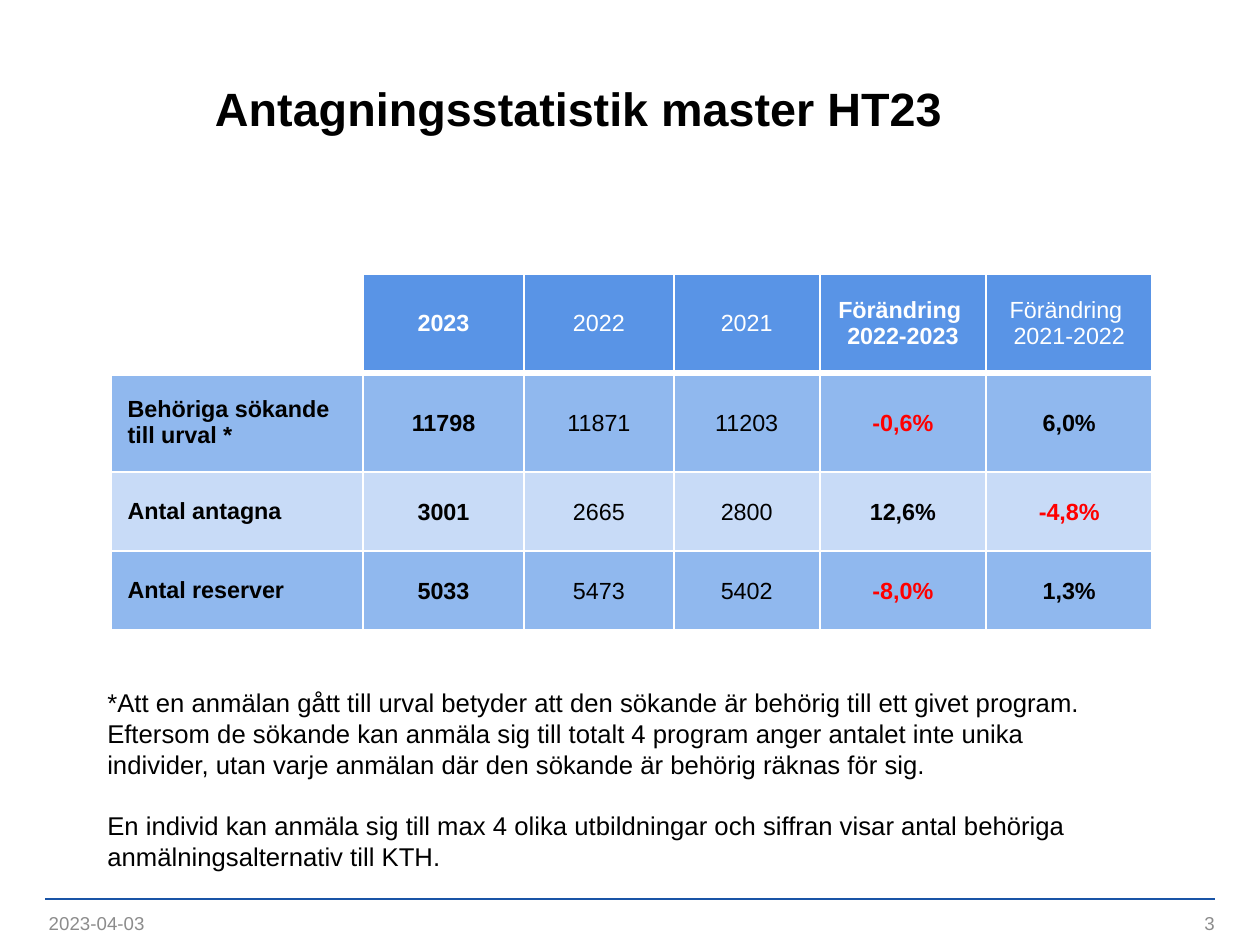
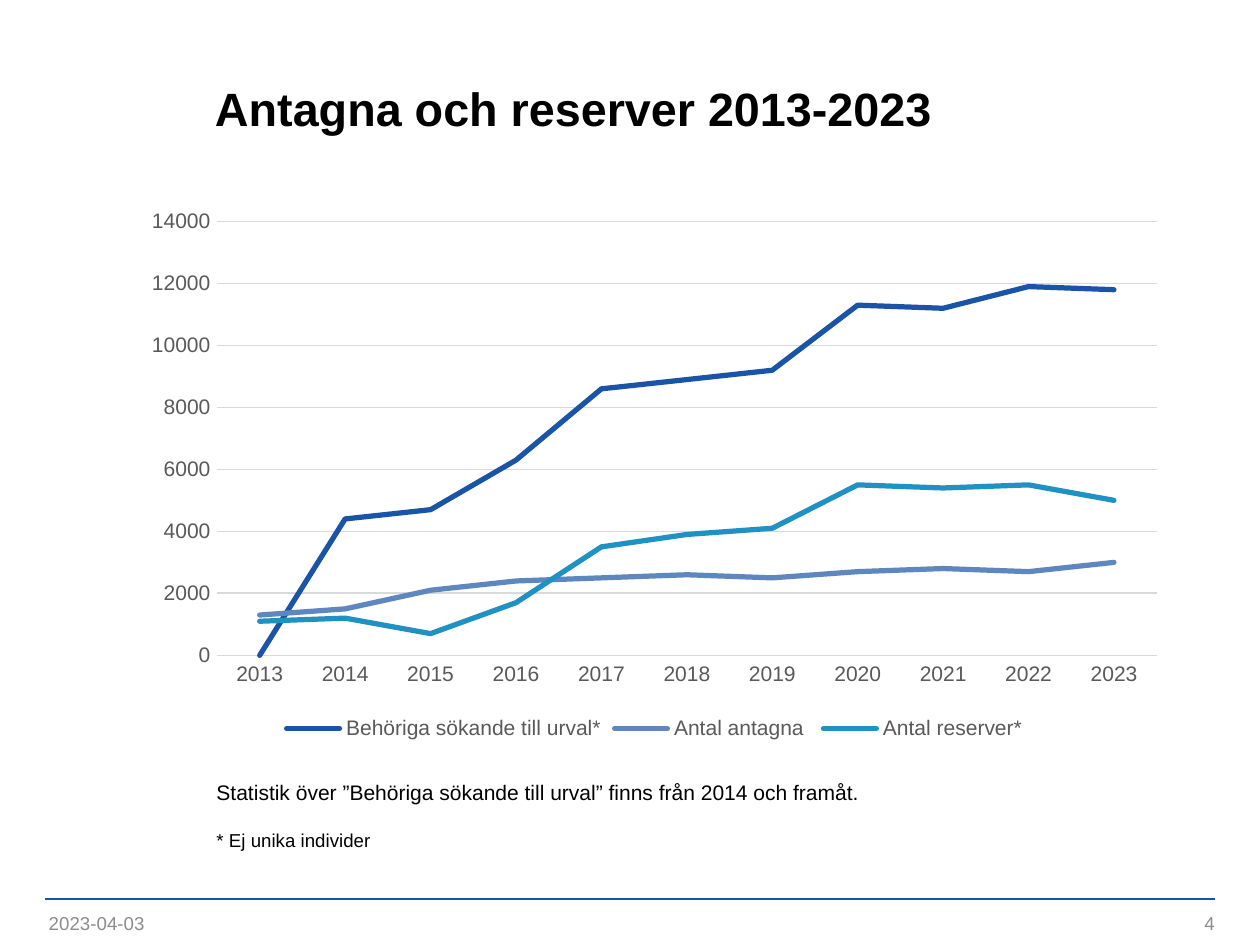
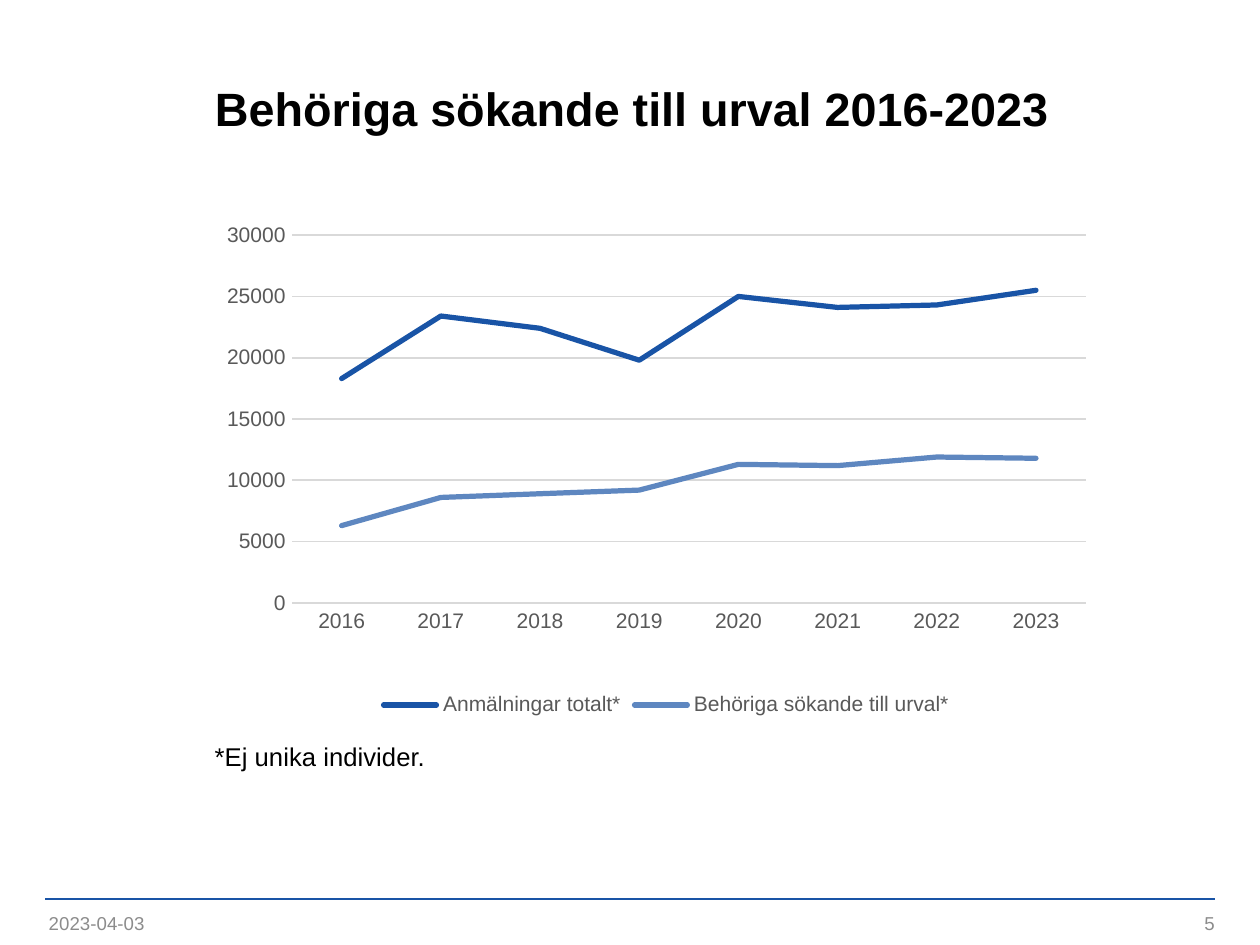
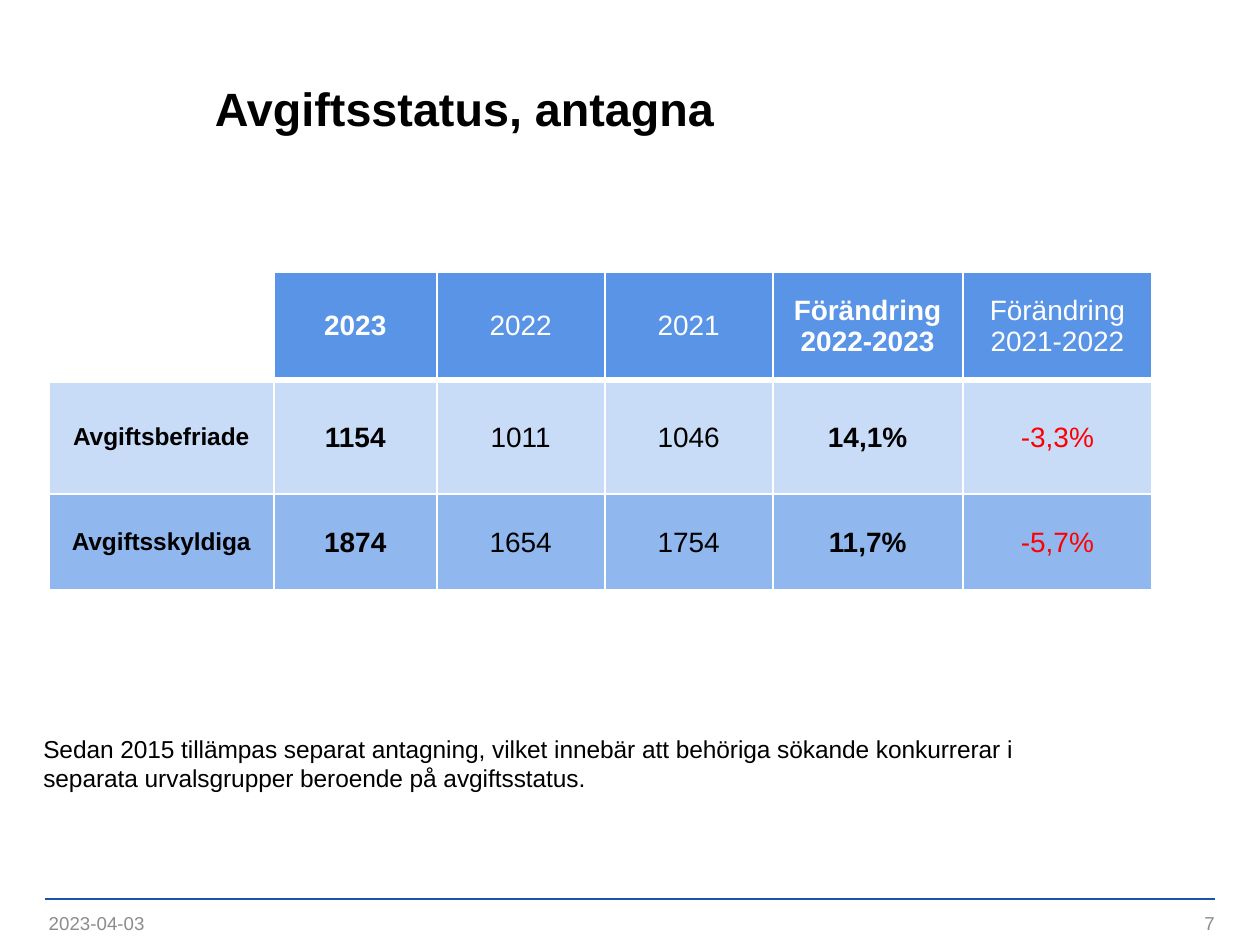
from dataclasses import dataclass
from typing import Optional

from pptx import Presentation
from pptx.chart.chart import Chart
from pptx.chart.data import CategoryChartData
from pptx.dml.color import RGBColor
from pptx.enum.chart import XL_CHART_TYPE, XL_LEGEND_POSITION, XL_TICK_MARK
from pptx.enum.shapes import MSO_CONNECTOR
from pptx.enum.text import MSO_ANCHOR, PP_ALIGN
from pptx.oxml.ns import qn
from pptx.oxml.xmlchemy import OxmlElement
from pptx.slide import Slide
from pptx.table import _Cell
from pptx.text.text import Font
from pptx.util import Inches, Pt


@dataclass(frozen=True)
class Theme:
    font: str = "Arial"
    text: str = "000000"
    white: str = "FFFFFF"
    footer: str = "8C8C8C"
    negative: str = "FF0000"
    header_fill: str = "5994E6"
    light_band: str = "C8DBF7"
    dark_band: str = "90B8EE"
    axis_text: str = "595959"
    grid: str = "D9D9D9"
    series: tuple[str, ...] = ("1954A6", "5E87C0", "2091C3")
    rule: str = "1954A6"
    title_size: float = 20
    title_leading: float = 22.5
    footer_size: float = 8
    chart_size: float = 9


THEME = Theme()
DATE = "2023-04-03"


@dataclass(frozen=True)
class Box:
    left: float
    top: float
    width: float
    height: float

    def lengths(self) -> tuple[int, int, int, int]:
        return (Inches(self.left), Inches(self.top),
                Inches(self.width), Inches(self.height))


@dataclass(frozen=True)
class Line:
    text: str
    size: float
    color: str = THEME.text
    bold: bool = False
    align: PP_ALIGN = PP_ALIGN.LEFT
    before: float = 0
    leading: Optional[float] = None


@dataclass(frozen=True)
class TableContent:
    box: Box
    columns: tuple[float, ...]
    heights: tuple[float, ...]
    rows: tuple[tuple[str, ...], ...]
    bands: tuple[str, ...]
    size: float
    label_size: float
    label_align: PP_ALIGN
    bold_columns: tuple[int, ...]


@dataclass(frozen=True)
class ChartContent:
    box: Box
    first_year: int
    series: dict[str, tuple[Optional[int], ...]]
    plot: Optional[tuple[float, float, float, float]] = None


@dataclass(frozen=True)
class Page:
    title: str
    number: int
    content: TableContent | ChartContent
    note_box: Box
    notes: tuple[Line, ...]


def set_font(font: Font, size: float, color: str, bold: bool = False) -> None:
    font.name = THEME.font
    font.size = Pt(size)
    font.bold = bold
    font.color.rgb = RGBColor.from_string(color)


def add_text(slide: Slide, box: Box, lines: tuple[Line, ...],
             anchor: MSO_ANCHOR = MSO_ANCHOR.MIDDLE, inset: bool = False) -> None:
    frame = slide.shapes.add_textbox(*box.lengths()).text_frame
    frame.word_wrap = True
    frame.vertical_anchor = anchor
    if not inset:
        frame.margin_left = frame.margin_right = Inches(0)
        frame.margin_top = frame.margin_bottom = Inches(0)
    for index, line in enumerate(lines):
        paragraph = frame.add_paragraph() if index else frame.paragraphs[0]
        paragraph.text = line.text
        paragraph.alignment = line.align
        if line.before:
            paragraph.space_before = Pt(line.before)
        if line.leading:
            paragraph.line_spacing = Pt(line.leading)
        set_font(paragraph.font, line.size, line.color, line.bold)


def add_frame(slide: Slide, title: str, number: int) -> None:
    """Title, footer rule, date and page number."""
    rule = slide.shapes.add_connector(
        MSO_CONNECTOR.STRAIGHT, Inches(0.27), Inches(5.35), Inches(7.23), Inches(5.35))
    rule.line.color.rgb = RGBColor.from_string(THEME.rule)
    rule.line.width = Pt(1)
    rule._element.spPr.append(OxmlElement("a:effectLst"))
    add_text(slide, Box(1.28, 0.28, 5.94, 0.74),
             (Line(title, THEME.title_size, bold=True, leading=THEME.title_leading),))
    for left, text, align in ((0.29, DATE, PP_ALIGN.LEFT),
                              (5.54, str(number), PP_ALIGN.RIGHT)):
        add_text(slide, Box(left, 5.37, 1.69, 0.25),
                 (Line(text, THEME.footer_size, THEME.footer, align=align),))


def add_borders(cell: _Cell, top: float, bottom: float) -> None:
    properties = cell._tc.get_or_add_tcPr()
    for side, width in (("L", 1), ("R", 1), ("T", top), ("B", bottom)):
        border = OxmlElement(f"a:ln{side}")
        border.set("w", str(Pt(width)))
        fill = OxmlElement("a:solidFill")
        color = OxmlElement("a:srgbClr")
        color.set("val", THEME.white)
        fill.append(color)
        border.append(fill)
        properties.append(border)


def add_statistics_table(slide: Slide, content: TableContent) -> None:
    table = slide.shapes.add_table(
        len(content.rows), len(content.columns), *content.box.lengths()).table
    table.first_row = table.horz_banding = False
    for column, width in zip(table.columns, content.columns):
        column.width = Inches(width)
    for row, height in zip(table.rows, content.heights):
        row.height = Inches(height)

    fills = (THEME.header_fill, *content.bands)
    for r, values in enumerate(content.rows):
        for c, value in enumerate(values):
            cell = table.cell(r, c)
            cell.vertical_anchor = MSO_ANCHOR.MIDDLE
            # A heavier rule parts the header from the body
            add_borders(cell, top=3 if r == 1 else 1, bottom=1 if r else 3)
            cell.fill.solid()
            cell.fill.fore_color.rgb = RGBColor.from_string(
                fills[r] if r or c else THEME.white)
            if not value:
                continue
            if r and c:
                cell.margin_left = cell.margin_right = cell.margin_top = Inches(0.01)
                cell.margin_bottom = Inches(0)
            color = THEME.text if r else THEME.white
            if value.startswith("-"):
                color = THEME.negative
            bold = c in content.bold_columns and (r > 0 or c < 5)
            cell.text = value
            for paragraph in cell.text_frame.paragraphs:
                paragraph.alignment = PP_ALIGN.CENTER if c else content.label_align
                set_font(paragraph.font, content.size if c else content.label_size,
                         color, bold)


def set_plot_layout(chart: Chart, fractions: tuple[float, ...]) -> None:
    plot_area = chart.plots[0]._element.getparent()
    for automatic in plot_area.findall(qn("c:layout")):
        plot_area.remove(automatic)
    layout, manual = OxmlElement("c:layout"), OxmlElement("c:manualLayout")
    settings = (("layoutTarget", "inner"), ("xMode", "edge"), ("yMode", "edge"),
                *zip("xywh", map(str, fractions)))
    for tag, value in settings:
        setting = OxmlElement(f"c:{tag}")
        setting.set("val", value)
        manual.append(setting)
    layout.append(manual)
    plot_area.insert(0, layout)


def add_trend_chart(slide: Slide, content: ChartContent) -> None:
    data = CategoryChartData()
    data.categories = [str(year) for year in range(content.first_year, 2024)]
    for name, values in content.series.items():
        data.add_series(name, values)
    chart = slide.shapes.add_chart(
        XL_CHART_TYPE.LINE, *content.box.lengths(), data).chart
    chart.has_title = False
    set_font(chart.font, 10, THEME.text)

    # Legend
    chart.has_legend = True
    chart.legend.position = XL_LEGEND_POSITION.BOTTOM
    chart.legend.include_in_layout = False
    set_font(chart.legend.font, THEME.chart_size, THEME.axis_text)

    # Axes and gridlines
    years, counts = chart.category_axis, chart.value_axis
    for axis in (years, counts):
        axis.major_tick_mark = axis.minor_tick_mark = XL_TICK_MARK.NONE
        set_font(axis.tick_labels.font, THEME.chart_size, THEME.axis_text)
    counts.minimum_scale = 0
    counts.has_major_gridlines = True
    for line in (years.format.line, counts.major_gridlines.format.line):
        line.color.rgb = RGBColor.from_string(THEME.grid)
        line.width = Pt(0.75)
    counts.format.line.fill.background()
    crossing = counts._element.find(qn("c:crossBetween"))
    if crossing is None:
        crossing = OxmlElement("c:crossBetween")
        counts._element.find(qn("c:crosses")).addnext(crossing)
    crossing.set("val", "between")

    # Series; a missing year is drawn as zero
    chart._chartSpace.chart.find(qn("c:dispBlanksAs")).set("val", "zero")
    for series, color in zip(chart.plots[0].series, THEME.series):
        series.smooth = False
        series.format.line.color.rgb = RGBColor.from_string(color)
        series.format.line.width = Pt(2.25)
        series.format.line._get_or_add_ln().set("cap", "rnd")
    if content.plot:
        set_plot_layout(chart, content.plot)


QUALIFIED = (6300, 8600, 8900, 9200, 11300, 11200, 11900, 11800)

PAGES = (
    Page(
        "Antagningsstatistik master HT23", 3,
        TableContent(
            Box(0.66, 1.63, 6.2, 2.12),
            (1.5, 0.96, 0.89, 0.87, 0.99, 0.99), (0.59, 0.59, 0.47, 0.47),
            (("", "2023", "2022", "2021",
              "Förändring \n2022-2023", "Förändring \n2021-2022"),
             ("Behöriga sökande till urval *", "11798", "11871", "11203", "-0,6%", "6,0%"),
             ("Antal antagna", "3001", "2665", "2800", "12,6%", "-4,8%"),
             ("Antal reserver", "5033", "5473", "5402", "-8,0%", "1,3%")),
            (THEME.dark_band, THEME.light_band, THEME.dark_band),
            size=10, label_size=10, label_align=PP_ALIGN.LEFT,
            bold_columns=(0, 1, 4, 5)),
        Box(0.54, 4.04, 6.12, 1.21),
        (Line("*Att en anmälan gått till urval betyder att den sökande är behörig till "
              "ett givet program. Eftersom de sökande kan anmäla sig till totalt 4 program "
              "anger antalet inte unika individer, utan varje anmälan där den sökande är "
              "behörig räknas för sig.", 11),
         Line("En individ kan anmäla sig till max 4 olika utbildningar och siffran visar "
              "antal behöriga anmälningsalternativ till KTH.", 11, before=13))),
    Page(
        "Antagna och reserver 2013-2023", 4,
        ChartContent(
            Box(0.78, 1.18, 6.23, 3.27), 2013,
            {"Behöriga sökande till urval*": (None, 4400, 4700, *QUALIFIED),
             "Antal antagna ": (1300, 1500, 2100, 2400, 2500, 2600,
                                2500, 2700, 2800, 2700, 3000),
             "Antal reserver*": (1100, 1200, 700, 1700, 3500, 3900,
                                 4100, 5500, 5400, 5500, 5000)}),
        Box(1.19, 4.59, 5.45, 0.56),
        (Line("Statistik över ”Behöriga sökande till urval” finns från 2014 och framåt.", 9),
         Line("* Ej unika individer", 8, before=10.5))),
    Page(
        "Behöriga sökande till urval 2016-2023", 5,
        ChartContent(
            Box(1.25, 1.31, 5.43, 3), 2016,
            {"Anmälningar totalt*": (18300, 23400, 22400, 19800,
                                     25000, 24100, 24300, 25500),
             "Behöriga sökande till urval*": QUALIFIED},
            plot=(0.09, 0.03, 0.87, 0.73)),
        Box(1.18, 4.36, 5.5, 0.28),
        (Line("*Ej unika individer.", 11),)),
    Page(
        "Avgiftsstatus, antagna", 7,
        TableContent(
            Box(0.29, 1.62, 6.57, 1.89),
            (1.34, 0.97, 1, 1, 1.13, 1.13), (0.64, 0.68, 0.57),
            (("", "2023", "2022", "2021",
              "Förändring 2022-2023", "Förändring 2021-2022"),
             ("Avgiftsbefriade", "1154", "1011", "1046", "14,1%", "-3,3%"),
             ("Avgiftsskyldiga", "1874", "1654", "1754", "11,7%", "-5,7%")),
            (THEME.light_band, THEME.dark_band),
            size=12, label_size=10.5, label_align=PP_ALIGN.CENTER,
            bold_columns=(0, 1, 4)),
        Box(0.16, 4.32, 6.16, 0.47),
        (Line("Sedan 2015 tillämpas separat antagning, vilket innebär att behöriga sökande "
              "konkurrerar i separata urvalsgrupper beroende på avgiftsstatus.", 10.5),)),
)


def main() -> None:
    deck = Presentation()
    # Slide format 4:3
    deck.slide_width = Inches(7.5)
    deck.slide_height = deck.slide_width * 3 // 4
    for page in PAGES:
        slide = deck.slides.add_slide(deck.slide_layouts[6])
        add_frame(slide, page.title, page.number)
        if isinstance(page.content, TableContent):
            add_statistics_table(slide, page.content)
        else:
            add_trend_chart(slide, page.content)
        add_text(slide, page.note_box, page.notes, MSO_ANCHOR.TOP, inset=True)
    deck.save("out.pptx")


if __name__ == "__main__":
    main()
